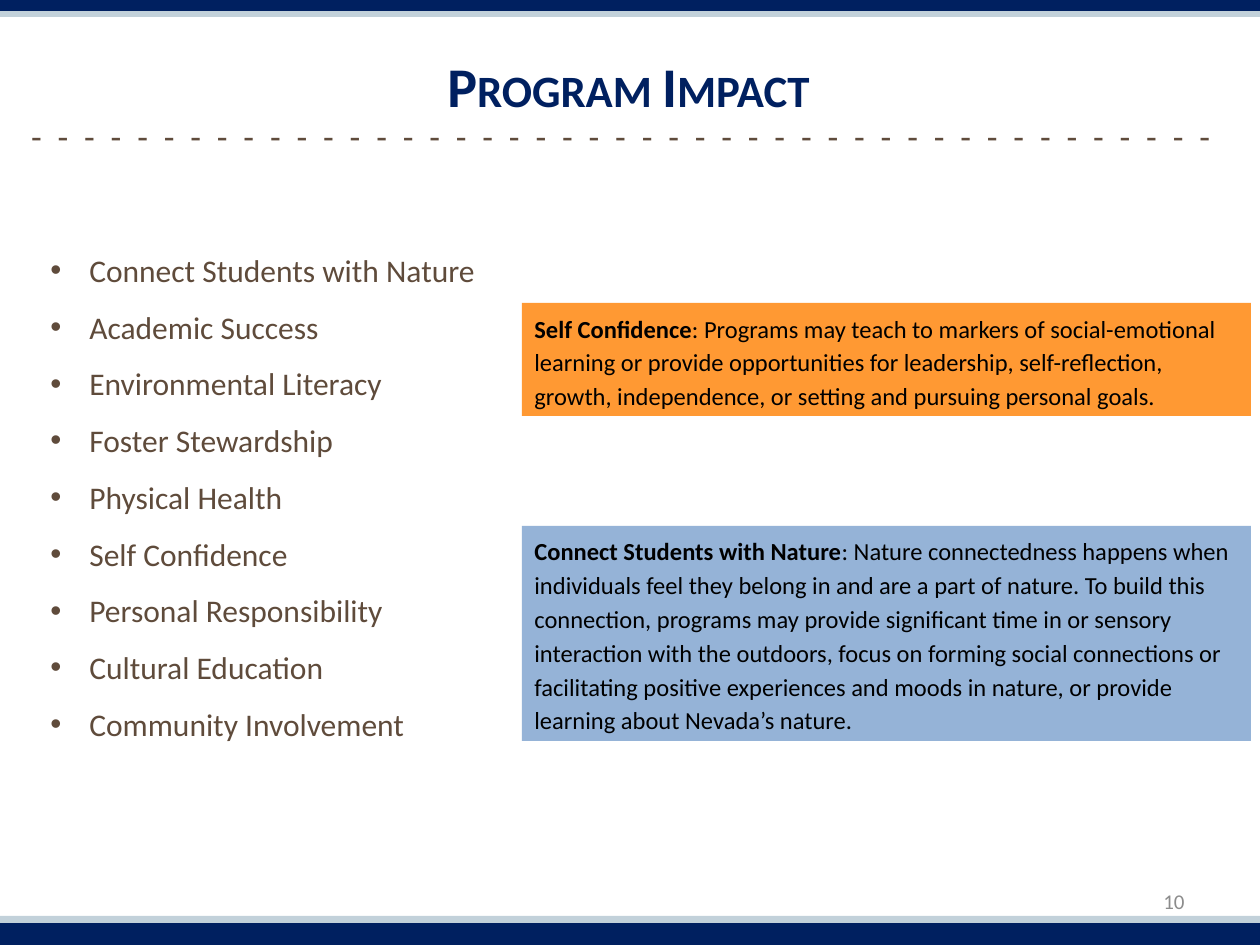
"""Build the Program Impact slide with its goal list and two definition boxes."""
from dataclasses import dataclass

import lxml.etree
import pptx
import pptx.dml.color
import pptx.enum.shapes
import pptx.enum.text
import pptx.oxml.ns
import pptx.util

EMU_PER_PX = 914400 / 126
W, H = 1260, 945
FONT = "Calibri"
NAVY, MIST, BROWN, GRAY, BLACK = "002060", "C2D1DA", "5F4B3B", "8C8C8C", "000000"
ALIGN = pptx.enum.text.PP_ALIGN
ANCHOR = pptx.enum.text.MSO_ANCHOR


@dataclass(frozen=True)
class Box:
    x: int
    y: int
    w: int
    h: int


@dataclass(frozen=True)
class Definition:
    box: Box
    fill: str
    term: str
    meaning: str


BARS = [
    (Box(0, 5, W, 12), MIST),
    (Box(0, 0, W, 11), NAVY),
    (Box(0, 916, W, 14), MIST),
    (Box(0, 923, W, 22), NAVY),
]

GOALS = [
    "Connect Students with Nature",
    "Academic Success",
    "Environmental Literacy",
    "Foster Stewardship",
    "Physical Health",
    "Self Confidence",
    "Personal Responsibility",
    "Cultural Education",
    "Community Involvement",
]

DEFINITIONS = [
    Definition(
        Box(522, 303, 729, 113), "FF9933", "Self Confidence",
        ": Programs may teach to markers of social-emotional learning or provide "
        "opportunities for leadership, self-reflection, growth, independence, or "
        "setting and pursuing personal goals.",
    ),
    Definition(
        Box(522, 526, 729, 215), "95B3D7", "Connect Students with Nature",
        ": Nature connectedness happens when individuals feel they belong in and are "
        "a part of nature. To build this connection, programs may provide significant "
        "time in or sensory interaction with the outdoors, focus on forming social "
        "connections or facilitating positive experiences and moods in nature, or "
        "provide learning about Nevada’s nature.",
    ),
]


def px(n: int) -> int:
    return round(n * EMU_PER_PX)


def place(box: Box) -> tuple:
    return px(box.x), px(box.y), px(box.w), px(box.h)


def rgb(value: str):
    return pptx.dml.color.RGBColor.from_string(value)


def set_all(target, values: dict) -> None:
    for name, value in values.items():
        setattr(target, name, value)


def add_rect(slide, box: Box, fill: str):
    sp = slide.shapes.add_shape(pptx.enum.shapes.MSO_SHAPE.RECTANGLE, *place(box))
    sp.shadow.inherit = False
    sp.fill.solid()
    sp.fill.fore_color.rgb = rgb(fill)
    sp.line.fill.background()
    return sp


def add_run(p, text: str, size: int, color: str, bold: bool = False):
    r = p.add_run()
    r.text = text
    set_all(r.font, {"name": FONT, "size": pptx.util.Pt(size), "bold": bold})
    r.font.color.rgb = rgb(color)
    return r


def add_text_frame(slide, box: Box, anchor=ANCHOR.TOP):
    tf = slide.shapes.add_textbox(*place(box)).text_frame
    set_all(tf, {"word_wrap": True, "vertical_anchor": anchor})
    return tf


def add_line(slide, box: Box, text: str, size: int, color: str, align,
             anchor=ANCHOR.MIDDLE, bold: bool = False, before: int = 0):
    p = add_text_frame(slide, box, anchor).paragraphs[0]
    set_all(p, {"alignment": align, "space_before": pptx.util.Pt(before)})
    return add_run(p, text, size, color, bold)


def add_goals(slide, box: Box, goals: list[str]) -> None:
    tf = add_text_frame(slide, box)
    for i, goal in enumerate(goals):
        p = tf.add_paragraph() if i else tf.paragraphs[0]
        p.line_spacing = 1.5
        pPr = p._p.get_or_add_pPr()
        pPr.set("marL", str(px(39)))
        pPr.set("indent", str(-px(39)))
        qn = pptx.oxml.ns.qn
        lxml.etree.SubElement(pPr, qn("a:buFont")).set("typeface", "Arial")
        lxml.etree.SubElement(pPr, qn("a:buChar")).set("char", "•")
        add_run(p, goal, 18, BROWN)


def add_definition(slide, item: Definition) -> None:
    tf = add_rect(slide, item.box, item.fill).text_frame
    set_all(tf, {"word_wrap": True, "vertical_anchor": ANCHOR.TOP})
    p = tf.paragraphs[0]
    set_all(p, {"alignment": ALIGN.LEFT, "line_spacing": 1.15,
                "space_after": pptx.util.Pt(10)})
    add_run(p, item.term, 14, BLACK, bold=True)
    add_run(p, item.meaning, 14, BLACK)


def main() -> None:
    prs = pptx.Presentation()
    set_all(prs, {"slide_width": px(W), "slide_height": px(H)})
    slide = prs.slides.add_slide(prs.slide_layouts[6])

    for box, fill in BARS:
        add_rect(slide, box, fill)
    dashes = ("-  " * 8 + "-  ") * 5
    add_line(slide, Box(0, 108, 1259, 55), dashes, 20, BROWN, ALIGN.CENTER,
             ANCHOR.TOP, before=12)
    add_line(slide, Box(903, 876, 294, 50), "10", 12, GRAY, ALIGN.RIGHT)
    title = add_line(slide, Box(93, -16, 1071, 203), "Program Impact", 32, NAVY,
                     ALIGN.CENTER, bold=True)
    title.font._element.set("cap", "small")
    add_goals(slide, Box(38, 226, 518, 566), GOALS)
    for item in DEFINITIONS:
        add_definition(slide, item)

    prs.save("out.pptx")


if __name__ == "__main__":
    main()
